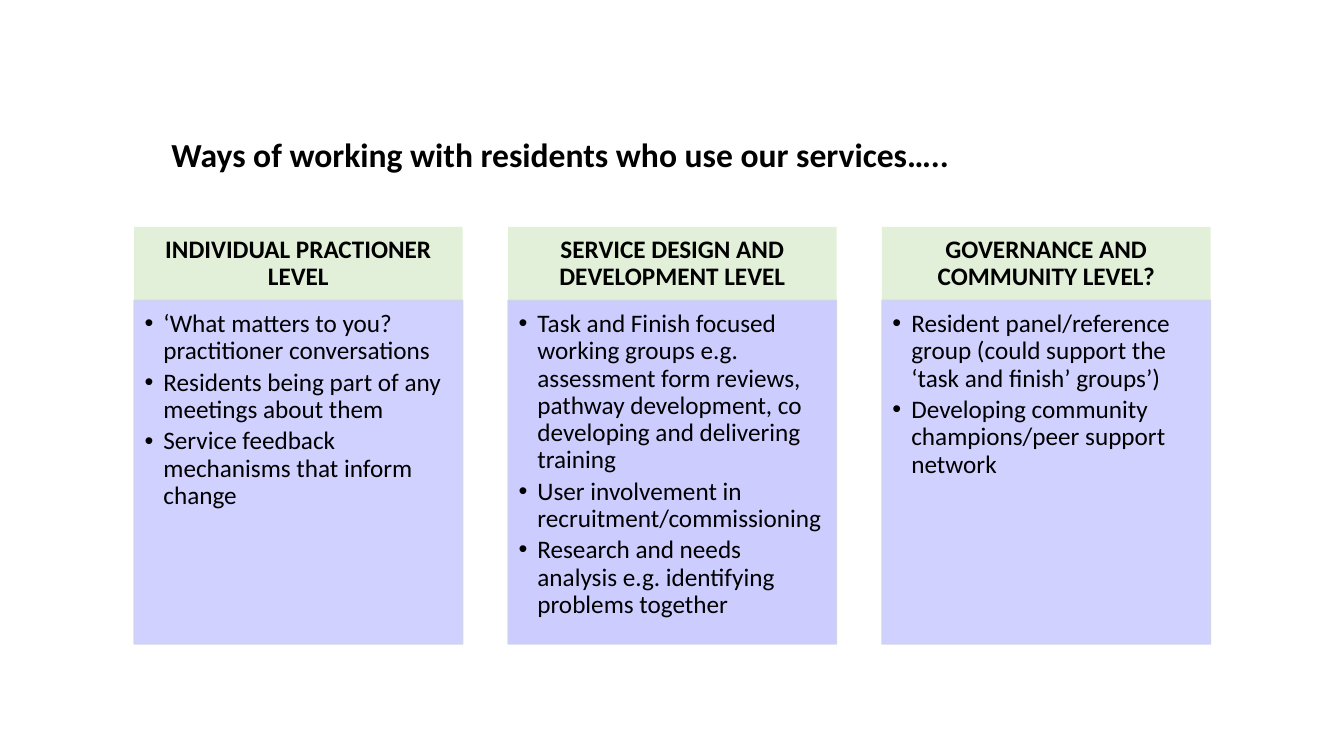
from lxml.etree import SubElement
from pptx import Presentation
from pptx.dml.color import RGBColor
from pptx.enum.shapes import MSO_SHAPE as Shape
from pptx.enum.text import MSO_ANCHOR as Anchor, MSO_AUTO_SIZE as AutoSize, PP_ALIGN as Align
from pptx.oxml.ns import qn
from pptx.util import Pt

BLACK = RGBColor(0x00, 0x00, 0x00)
GREEN = RGBColor(0xE2, 0xF0, 0xD9)
LILAC = RGBColor(0xCC, 0xCC, 0xFF)
BORDER = RGBColor(0xCF, 0xD5, 0xEA)

# Column grid, in points
LEFT, PITCH, WIDTH = 95.76, 267.12, 234.72
HEADING_TOP, HEADING_HEIGHT = 162, 52.56
BODY_TOP, BODY_HEIGHT = HEADING_TOP + HEADING_HEIGHT, 245.52

# Heading, opacity of the body fill in percent, bullet points
LEVELS = [
    ("INDIVIDUAL PRACTIONER LEVEL", 90, [
        "‘What matters to you? practitioner conversations",
        "Residents being part of any meetings about them",
        "Service feedback mechanisms that inform change",
    ]),
    ("SERVICE DESIGN AND DEVELOPMENT LEVEL", 100, [
        "Task and Finish focused working groups e.g. assessment form reviews, "
        "pathway development, co developing and delivering training",
        "User involvement in recruitment/commissioning",
        "Research and needs analysis e.g. identifying problems together",
    ]),
    ("GOVERNANCE AND COMMUNITY LEVEL?", 90, [
        "Resident panel/reference group (could support the ‘task and finish’ groups’)",
        "Developing community champions/peer support network",
    ]),
]


def set_opacity(parent, percent):
    for color in parent.iter(qn("a:srgbClr")):
        SubElement(color, qn("a:alpha")).set("val", str(percent * 1000))


class LevelsSlide:
    font = "Calibri"
    size = 18
    title_size = 24

    def __init__(self, deck):
        self.slide = deck.slides.add_slide(deck.slide_layouts[5])

    def run(self, paragraph, text, size, bold=False):
        run = paragraph.add_run()
        run.text = text
        run.font.name = self.font
        run.font.size = Pt(size)
        run.font.bold = bold
        run.font.color.rgb = BLACK

    def title(self, text, left, top, width, height):
        title = self.slide.shapes.title
        title.left, title.top = Pt(left), Pt(top)
        title.width, title.height = Pt(width), Pt(height)
        frame = title.text_frame
        frame.word_wrap = True
        frame.auto_size = AutoSize.NONE
        frame.vertical_anchor = Anchor.TOP
        frame.paragraphs[0].alignment = Align.LEFT
        self.run(frame.paragraphs[0], text, self.title_size, bold=True)

    def box(self, left, top, height, fill, anchor, insets):
        box = self.slide.shapes.add_shape(
            Shape.RECTANGLE, Pt(left), Pt(top), Pt(WIDTH), Pt(height))
        box.shadow.inherit = False
        box.fill.solid()
        box.fill.fore_color.rgb = fill
        box.line.fill.background()
        frame = box.text_frame
        frame.word_wrap = True
        frame.vertical_anchor = anchor
        (frame.margin_left, frame.margin_top,
         frame.margin_right, frame.margin_bottom) = map(Pt, insets)
        return box

    def heading(self, text, left):
        heading = self.box(left, HEADING_TOP, HEADING_HEIGHT, GREEN,
                           Anchor.MIDDLE, (10, 5.75, 10, 5.75))
        paragraph = heading.text_frame.paragraphs[0]
        paragraph.alignment = Align.CENTER
        paragraph.line_spacing = 0.9
        self.run(paragraph, text, self.size, bold=True)

    def body(self, points, left, opacity):
        body = self.box(left, BODY_TOP, BODY_HEIGHT, LILAC,
                        Anchor.TOP, (7.5, 7.5, 10, 11.25))
        if opacity < 100:
            set_opacity(body.element.spPr, opacity)
        body.line.color.rgb = BORDER
        body.line.width = Pt(1)
        set_opacity(body.line.fill._xPr, 90)
        frame = body.text_frame
        for index, point in enumerate(points):
            paragraph = frame.add_paragraph() if index else frame.paragraphs[0]
            self.bullet(paragraph, point)

    def bullet(self, paragraph, text):
        paragraph.alignment = Align.LEFT
        paragraph.level = 1
        paragraph.line_spacing = 0.9
        paragraph.space_after = Pt(3)
        properties = paragraph._p.get_or_add_pPr()
        properties.set("marL", str(Pt(13.5)))
        properties.set("indent", str(-Pt(13.5)))
        SubElement(properties, qn("a:buFont")).set("typeface", "Arial")
        SubElement(properties, qn("a:buChar")).set("char", "•")
        self.run(paragraph, text, self.size)


def main():
    deck = Presentation()
    deck.slide_width, deck.slide_height = Pt(960), Pt(540)
    levels = LevelsSlide(deck)

    # Title
    levels.title("Ways of working with residents who use our services…..",
                 115.2, 92.16, 681.12, 36)

    # One column per level
    for column, (heading, opacity, points) in enumerate(LEVELS):
        left = LEFT + column * PITCH
        levels.heading(heading, left)
        levels.body(points, left, opacity)

    deck.save("out.pptx")


if __name__ == "__main__":
    main()
